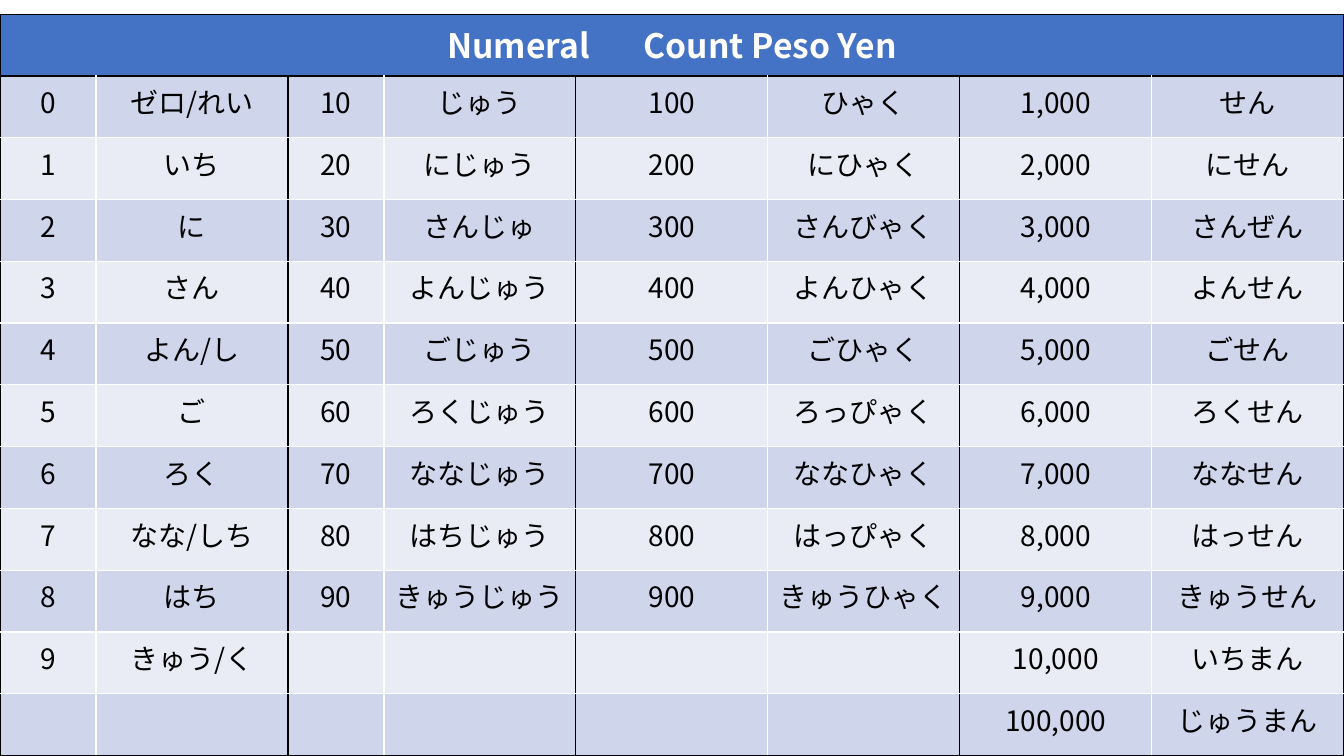
from lxml.etree import SubElement
from pptx import Presentation
from pptx.dml.color import RGBColor
from pptx.enum.text import PP_ALIGN
from pptx.oxml.ns import qn
from pptx.util import Inches, Pt

BLACK = RGBColor(0x00, 0x00, 0x00)
WHITE = RGBColor(0xFF, 0xFF, 0xFF)
BLUE = RGBColor(0x44, 0x72, 0xC4)
BAND_DARK = RGBColor(0xCF, 0xD5, 0xEA)
BAND_LIGHT = RGBColor(0xE9, 0xEB, 0xF5)

SLIDE_W, SLIDE_H = 13.33, 7.5
TABLE_TOP = 0.14
COLUMN_UNITS = [1, 2, 1, 2, 2, 2, 2, 2]
BODY_ROWS = 11

ONES = ["ゼロ/れい", "いち", "に", "さん", "よん/し", "ご", "ろく", "なな/しち",
        "はち", "きゅう/く"]
TENS = ["じゅう", "にじゅう", "さんじゅ", "よんじゅう", "ごじゅう", "ろくじゅう",
        "ななじゅう", "はちじゅう", "きゅうじゅう"]
HUNDREDS = ["ひゃく", "にひゃく", "さんびゃく", "よんひゃく", "ごひゃく",
            "ろっぴゃく", "ななひゃく", "はっぴゃく", "きゅうひゃく"]
THOUSANDS = ["せん", "にせん", "さんぜん", "よんせん", "ごせん", "ろくせん",
             "ななせん", "はっせん", "きゅうせん", "いちまん", "じゅうまん"]
NUMERAL_GROUPS = [
    (range(10), ONES),
    (range(10, 100, 10), TENS),
    (range(100, 1000, 100), HUNDREDS),
    ([*range(1000, 10001, 1000), 100000], THOUSANDS),
]


def add_run(p, text, *, font, size, color, bold=False, spacing=0):
    """Add a run; spacing is the extra space in points after each letter."""
    r = p.add_run()
    r.text = text
    r.font.name = font
    r.font.size = Pt(size)
    r.font.bold = bold
    r.font.color.rgb = color
    rPr = r.font._element
    SubElement(rPr, qn("a:ea")).set("typeface", font)
    if spacing:
        rPr.set("spc", str(spacing * 100))


class NumeralSlide:
    font = "Noto Sans CJK JP"
    title_size = 24
    body_size = 20
    border_width = Pt(1)

    def __init__(self, prs):
        self.s = prs.slides.add_slide(prs.slide_layouts[6])

    def table(self, left, top, width, height, rows, units):
        """Add a table with equal rows and columns shared out by units."""
        frame = self.s.shapes.add_table(
            rows, len(units), Inches(left), Inches(top), Inches(width), Inches(height))
        tbl = frame.table
        for column, unit in zip(tbl.columns, units):
            column.width = Inches(width * unit / sum(units))
        for row in tbl.rows:
            row.height = Inches(height / rows)
        return tbl

    def borders(self, cell, left, right, top, bottom):
        tcPr = cell._tc.get_or_add_tcPr()
        for side, color in zip("LRTB", (left, right, top, bottom)):
            ln = SubElement(tcPr, qn(f"a:ln{side}"), w=str(self.border_width))
            fill = SubElement(ln, qn("a:solidFill"))
            SubElement(fill, qn("a:srgbClr"), val=str(color))

    def cell(self, cell, fill, borders):
        """Style a cell and return its centred paragraph."""
        self.borders(cell, *borders)
        cell.fill.solid()
        cell.fill.fore_color.rgb = fill
        p = cell.text_frame.paragraphs[0]
        p.alignment = PP_ALIGN.CENTER
        return p

    def header(self, tbl):
        last = len(tbl.columns) - 1
        tbl.cell(0, 0).merge(tbl.cell(0, last))
        paragraphs = [self.cell(tbl.cell(0, col), BLUE, [BLACK] * 4)
                      for col in range(last + 1)]
        # The wide gap after the first word is a single widened space.
        for text, spacing in (("Numeral", 0), (" ", 33), ("Count Peso Yen", 0)):
            add_run(paragraphs[0], text, font=self.font, size=self.title_size,
                    color=WHITE, bold=True, spacing=spacing)

    def group(self, tbl, first_col, numbers, readings):
        """Fill a pair of columns with numbers and their readings."""
        texts = [(f"{n:,}", reading) for n, reading in zip(numbers, readings)]
        texts += [("", "")] * (BODY_ROWS - len(texts))
        for row, pair in enumerate(texts, start=1):
            fill = BAND_DARK if row % 2 else BAND_LIGHT
            top = BLACK if row == 1 else WHITE
            bottom = BLACK if row == BODY_ROWS else WHITE
            sides = ((BLACK, WHITE), (WHITE, BLACK))
            for offset, text in enumerate(pair):
                p = self.cell(tbl.cell(row, first_col + offset), fill,
                              (*sides[offset], top, bottom))
                if text:
                    add_run(p, text, font=self.font, size=self.body_size, color=BLACK)


def main():
    prs = Presentation()
    prs.slide_width = Inches(SLIDE_W)
    prs.slide_height = Inches(SLIDE_H)
    slide = NumeralSlide(prs)
    tbl = slide.table(0, TABLE_TOP, SLIDE_W, SLIDE_H - TABLE_TOP,
                      BODY_ROWS + 1, COLUMN_UNITS)
    slide.header(tbl)
    for i, (numbers, readings) in enumerate(NUMERAL_GROUPS):
        slide.group(tbl, 2 * i, numbers, readings)
    prs.save("out.pptx")


if __name__ == "__main__":
    main()
